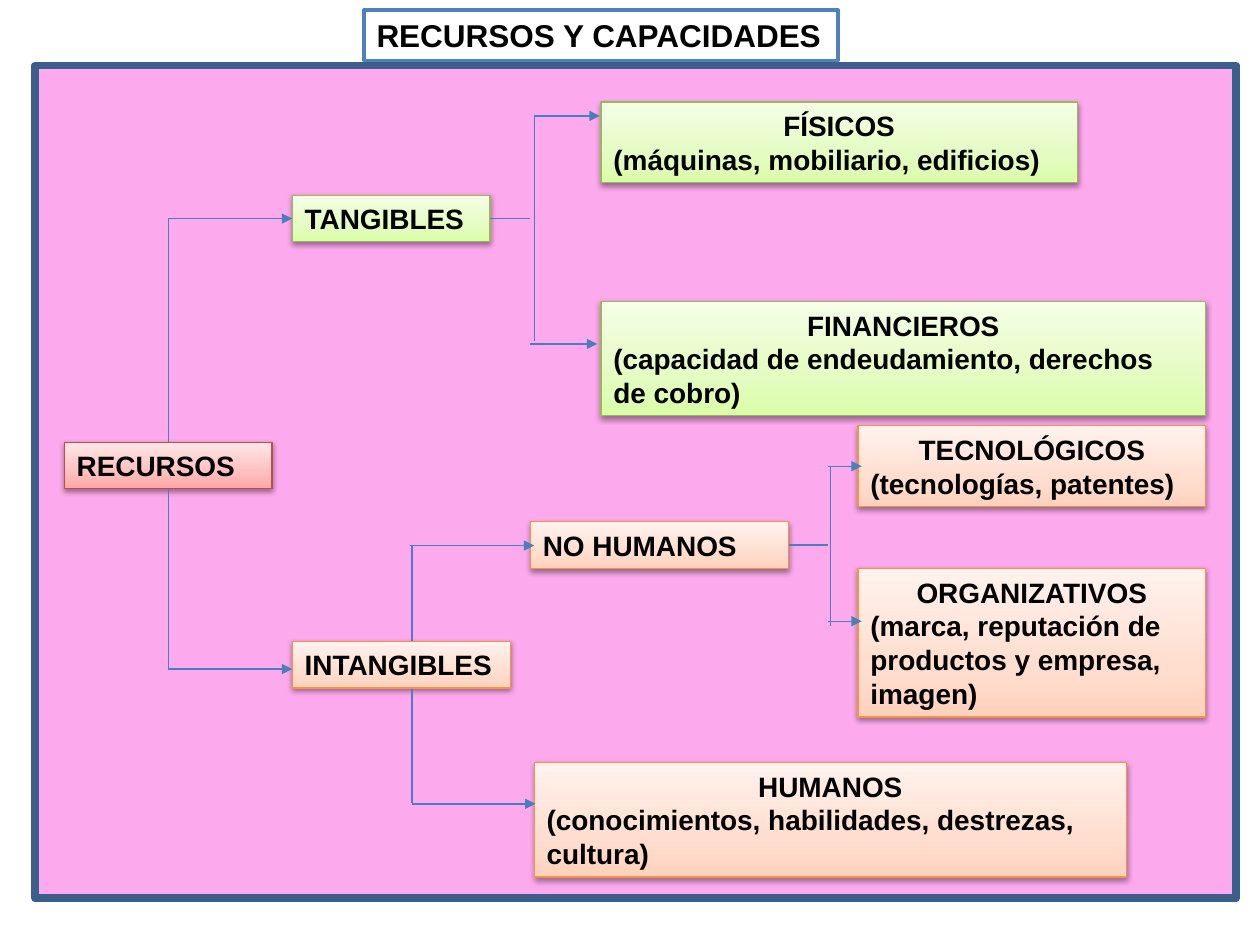
from copy import deepcopy
from dataclasses import dataclass

from lxml import etree
from pptx import Presentation
from pptx.dml.color import RGBColor
from pptx.enum.shapes import MSO_CONNECTOR, MSO_SHAPE
from pptx.enum.text import MSO_AUTO_SIZE, PP_ALIGN
from pptx.oxml.ns import qn
from pptx.util import Inches, Pt

RECTANGLE = MSO_SHAPE.RECTANGLE
STRAIGHT = MSO_CONNECTOR.STRAIGHT
GROW = MSO_AUTO_SIZE.SHAPE_TO_FIT_TEXT
LEFT, CENTER = PP_ALIGN.LEFT, PP_ALIGN.CENTER
TOP_SIDE, LEFT_SIDE, BOTTOM_SIDE, RIGHT_SIDE = range(4)


@dataclass(frozen=True)
class Theme:
    """Colours, font and sizes of the slide."""
    font: str = "Arial"
    text_size: int = 16
    title_size: int = 18
    text: str = "000000"
    panel: str = "FDA9ED"
    panel_line: str = "3A5F8C"
    title_fill: str = "FFFFFF"
    title_line: str = "4F81BD"
    connector: str = "4B7EBC"
    red: tuple = ("FFA6A5", "FFC0BF", "FFE7E7", "BF4C48")
    green: tuple = ("DAFDA7", "E4FCC2", "F5FFE7", "98B955")
    orange: tuple = ("FFD2BD", "FFDED0", "FFF2ED", "F69240")


THEME = Theme()


def color(value):
    """Turn a hex string into a colour."""
    return RGBColor.from_string(value)


def add_rectangle(page, place, line, width):
    """Add an outlined rectangle without effects."""
    box = page.shapes.add_shape(RECTANGLE, *map(Inches, place))
    box.shadow.inherit = False
    box.line.color.rgb = color(line)
    box.line.width = Pt(width)
    return box


def fill_solid(box, value):
    """Give a box one plain colour."""
    box.fill.solid()
    box.fill.fore_color.rgb = color(value)


def fill_gradient(box, colors):
    """Fill a box with three colours from bottom to top."""
    box.fill.gradient()
    box.fill.gradient_angle = 90
    stops = box._element.spPr.find(qn("a:gradFill")).find(qn("a:gsLst"))
    stops.insert(1, deepcopy(stops[0]))
    for stop, position, value in zip(box.fill.gradient_stops, (0, 0.35, 1), colors):
        stop.position = position
        stop.color.rgb = color(value)


def add_shadow(box):
    """Add a soft shadow below a box."""
    effects = box._element.spPr.find(qn("a:effectLst"))
    shadow = etree.SubElement(effects, qn("a:outerShdw"), blurRad="40000",
                              dist="20000", dir="5400000", rotWithShape="0")
    tint = etree.SubElement(shadow, qn("a:srgbClr"), val="000000")
    etree.SubElement(tint, qn("a:alpha"), val="38000")


def write(box, lines, size, wrap=True):
    """Write bold lines, centring a heading that has details under it."""
    frame = box.text_frame
    frame.word_wrap = wrap
    frame.auto_size = GROW
    for index, text in enumerate(lines):
        para = frame.paragraphs[0] if index == 0 else frame.add_paragraph()
        para.alignment = CENTER if index == 0 and len(lines) > 1 else LEFT
        span = para.add_run()
        span.text = text
        span.font.name = THEME.font
        span.font.size = Pt(size)
        span.font.bold = True
        span.font.color.rgb = color(THEME.text)


def add_node(page, place, palette, *lines):
    """Add one box of the tree."""
    *colors, line = palette
    box = add_rectangle(page, place, line, 0.75)
    fill_gradient(box, colors)
    add_shadow(box)
    write(box, lines, THEME.text_size)
    return box


def side_point(box, side):
    """Return the middle of a side of a box in inches."""
    across = {LEFT_SIDE: 0, RIGHT_SIDE: 1}.get(side, 0.5)
    down = {TOP_SIDE: 0, BOTTOM_SIDE: 1}.get(side, 0.5)
    return ((box.left + box.width * across) / Inches(1),
            (box.top + box.height * down) / Inches(1))


def add_line(page, start, end, arrow=False, begin_at=None, end_at=None):
    """Add a line between two points, joined to boxes where given."""
    line = page.shapes.add_connector(STRAIGHT, *map(Inches, (*start, *end)))
    if begin_at:
        line.begin_connect(*begin_at)
    if end_at:
        line.end_connect(*end_at)
    line.line.color.rgb = color(THEME.connector)
    line.line.width = Pt(0.75)
    if arrow:
        etree.SubElement(line.line._get_or_add_ln(), qn("a:tailEnd"), type="triangle")
    etree.SubElement(line._element.spPr, qn("a:effectLst"))


def add_root_branches(page, root, tangible):
    """Link the root to its two children."""
    trunk, root_top = side_point(root, TOP_SIDE)
    root_bottom = side_point(root, BOTTOM_SIDE)
    child_left, upper = side_point(tangible, LEFT_SIDE)
    lower = 5.31
    add_line(page, (trunk, root_top), (trunk, upper), begin_at=(root, TOP_SIDE))
    add_line(page, root_bottom, (trunk, lower), begin_at=(root, BOTTOM_SIDE))
    add_line(page, (trunk, upper), (child_left, upper), True, end_at=(tangible, LEFT_SIDE))
    add_line(page, (trunk, lower), (child_left, lower), True)


def add_stub(page, box, right):
    """Draw the short line leaving the right side of a box."""
    start = side_point(box, RIGHT_SIDE)
    add_line(page, start, (right, start[1]), begin_at=(box, RIGHT_SIDE))


def main():
    """Build the slide and save it."""
    deck = Presentation()
    deck.slide_width, deck.slide_height = Inches(10), Inches(7.5)
    page = deck.slides.add_slide(deck.slide_layouts[6])

    panel = add_rectangle(page, (0.28, 0.52, 9.53, 6.61), THEME.panel_line, 4.5)
    fill_solid(panel, THEME.panel)

    root = add_node(page, (0.51, 3.51, 1.65, 0.37), THEME.red, "RECURSOS")
    tangible = add_node(page, (2.32, 1.55, 1.57, 0.37), THEME.green, "TANGIBLES")
    add_node(page, (2.32, 5.09, 1.73, 0.37), THEME.orange, "INTANGIBLES")
    add_node(page, (4.77, 0.81, 3.78, 0.64), THEME.green,
             "FÍSICOS", "(máquinas, mobiliario, edificios)")
    add_node(page, (4.77, 2.39, 4.8, 0.91), THEME.green,
             "FINANCIEROS", "(capacidad de endeudamiento, derechos de cobro)")
    non_human = add_node(page, (4.21, 4.14, 2.05, 0.37), THEME.orange, "NO HUMANOS")
    add_node(page, (4.24, 6.05, 4.7, 0.91), THEME.orange,
             "HUMANOS", "(conocimientos, habilidades, destrezas, cultura)")
    add_node(page, (6.81, 3.38, 2.76, 0.64), THEME.orange,
             "TECNOLÓGICOS", "(tecnologías, patentes)")
    add_node(page, (6.81, 4.51, 2.76, 1.18), THEME.orange,
             "ORGANIZATIVOS", "(marca, reputación de productos y empresa, imagen)")

    add_root_branches(page, root, tangible)
    add_stub(page, tangible, 4.21)
    add_stub(page, non_human, 6.57)
    for x, top, bottom in ((4.24, 0.93, 2.71), (3.27, 4.33, 5.09),
                           (3.27, 5.47, 6.37), (6.59, 3.7, 4.97)):
        add_line(page, (x, top), (x, bottom))
    for y, left, right in ((0.92, 4.24, 4.76), (2.73, 4.21, 4.74),
                           (4.33, 3.25, 4.24), (6.38, 3.27, 4.25),
                           (3.7, 6.57, 6.84), (4.93, 6.57, 6.84)):
        add_line(page, (left, y), (right, y), True)

    title = add_rectangle(page, (2.89, 0.08, 3.76, 0.4), THEME.title_line, 2)
    fill_solid(title, THEME.title_fill)
    write(title, ["RECURSOS Y CAPACIDADES"], THEME.title_size, wrap=False)
    deck.save("out.pptx")


if __name__ == "__main__":
    main()
